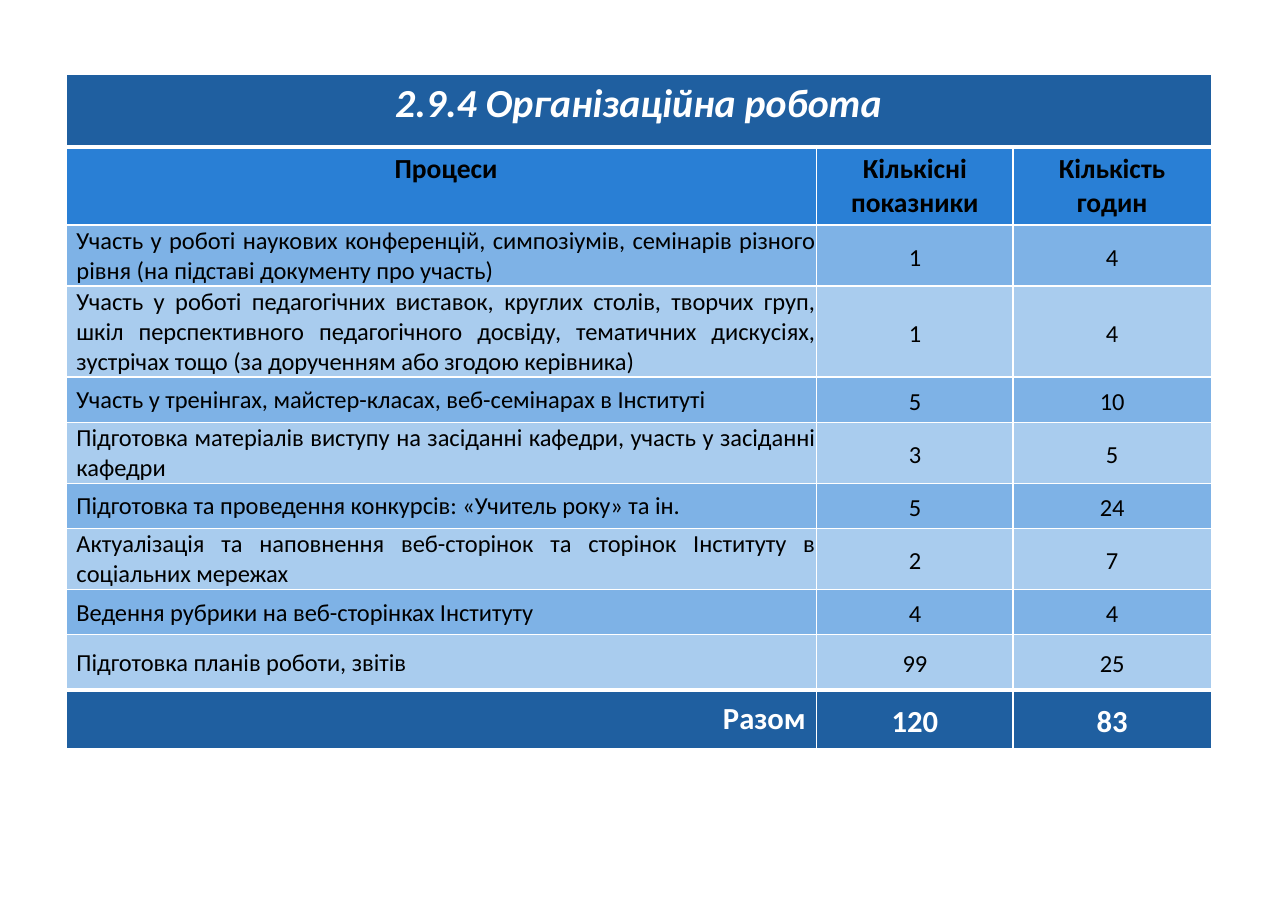
from lxml import etree
from pptx import Presentation
from pptx.dml.color import RGBColor
from pptx.enum.text import MSO_ANCHOR as Anchor, PP_ALIGN as Align
from pptx.oxml.ns import qn
from pptx.util import Pt

COLORS = {"dark": "1F5FA0", "header": "297FD5", "odd": "7EB2E6", "even": "A9CCEE",
          "white": "FFFFFF", "black": "000000"}
TEXT_INDENT = Pt(5.76)

title = "2.9.4 Організаційна робота"
headings = ["Процеси", "Кількісні показники", "Кількість годин"]
processes = [
    ("Участь у роботі наукових конференцій, симпозіумів, семінарів різного рівня "
     "(на підставі документу про участь)", 1, 4, 39.8),
    ("Участь у роботі педагогічних виставок, круглих столів, творчих груп, шкіл "
     "перспективного педагогічного досвіду, тематичних дискусіях, зустрічах тощо "
     "(за дорученням або згодою керівника)", 1, 4, 59.4),
    ("Участь у тренінгах, майстер-класах, веб-семінарах в Інституті", 5, 10, 29.6),
    ("Підготовка матеріалів виступу на засіданні кафедри, участь у засіданні кафедри",
     3, 5, 39.8),
    ("Підготовка та проведення конкурсів: «Учитель року» та ін.", 5, 24, 29.6),
    ("Актуалізація та наповнення веб-сторінок та сторінок Інституту в соціальних мережах",
     2, 7, 39.8),
    ("Ведення рубрики на веб-сторінках Інституту", 4, 4, 29.6),
    ("Підготовка планів роботи, звітів", 99, 25, 36),
]
total = ["Разом", 120, 83]

column_widths = [490.3, 128.2, 129.6]
row_heights = [47.5, 50.5, *(process[3] for process in processes), 38.6]
row_count = len(row_heights)
last_row = row_count - 1


def add_borders(cell, top, bottom):
    """Draw white cell edges; top and bottom are widths in points."""
    properties = cell._tc.get_or_add_tcPr()
    for edge, width in (("L", 1), ("R", 1), ("T", top), ("B", bottom)):
        line = etree.SubElement(properties, qn(f"a:ln{edge}"), w=str(Pt(width)))
        fill = etree.SubElement(line, qn("a:solidFill"))
        etree.SubElement(fill, qn("a:srgbClr"), val=COLORS["white"])


def write_cell(cell, text, size, color, align, insets, anchor=Anchor.MIDDLE,
               bold=False, italic=False):
    """Fill in one cell; insets are left, top, right, bottom in points."""
    cell.margin_left, cell.margin_top, cell.margin_right, cell.margin_bottom = map(Pt, insets)
    cell.vertical_anchor = anchor
    cell.text = str(text)
    para = cell.text_frame.paragraphs[0]
    para.alignment = align
    para.font.name = "Calibri"
    para.font.size = Pt(size)
    para.font.bold = bold
    para.font.italic = italic
    para.font.color.rgb = RGBColor.from_string(COLORS[color])
    return para


deck = Presentation()
deck.slide_width, deck.slide_height = Pt(841.68), Pt(595.44)
page = deck.slides.add_slide(deck.slide_layouts[6])
table = page.shapes.add_table(row_count, 3, Pt(43.5), Pt(48.5),
                              Pt(sum(column_widths)), Pt(sum(row_heights))).table
table.first_row = False
table.horz_banding = False
for column, width in zip(table.columns, column_widths):
    column.width = Pt(width)

for index, height in enumerate(row_heights):
    table.rows[index].height = Pt(height)
    if index in (0, last_row):
        shade = "dark"
    elif index == 1:
        shade = "header"
    else:
        shade = "even" if index % 2 else "odd"
    for cell in table.rows[index].cells:
        add_borders(cell, top=3 if index in (1, last_row) else 1,
                    bottom=3 if index in (0, last_row - 1) else 1)
        cell.fill.solid()
        cell.fill.fore_color.rgb = RGBColor.from_string(COLORS[shade])

title_cell = table.cell(0, 0)
title_cell.merge(table.cell(0, 2))
write_cell(title_cell, title, 26, "white", Align.CENTER, (7.2, 3.6, 7.2, 3.6),
           Anchor.TOP, bold=True, italic=True)

for column, heading in enumerate(headings):
    para = write_cell(table.cell(1, column), heading, 18, "black", Align.CENTER,
                      (7.92, 3.6, 7.92, 3.6), Anchor.TOP, bold=True)
    if column == 0:
        para._p.get_or_add_pPr().set("marL", str(TEXT_INDENT))

for row, (process, *numbers, _) in enumerate(processes, start=2):
    para = write_cell(table.cell(row, 0), process, 16, "black", Align.JUSTIFY,
                      (0.72, 0.72, 0.72, 0))
    para._p.get_or_add_pPr().set("marL", str(TEXT_INDENT))
    for column, number in enumerate(numbers, start=1):
        para = write_cell(table.cell(row, column), number, 16, "black", Align.CENTER,
                          (5.04, 0, 5.04, 0))
        para.line_spacing = 1.15

write_cell(table.cell(last_row, 0), total[0], 20, "white", Align.RIGHT,
           (7.2, 3.6, 7.2, 3.6), bold=True)
for column in (1, 2):
    para = write_cell(table.cell(last_row, column), total[column], 20, "white",
                      Align.CENTER, (5.04, 0, 5.04, 0), bold=True)
    para.line_spacing = 1.15

deck.save("out.pptx")
